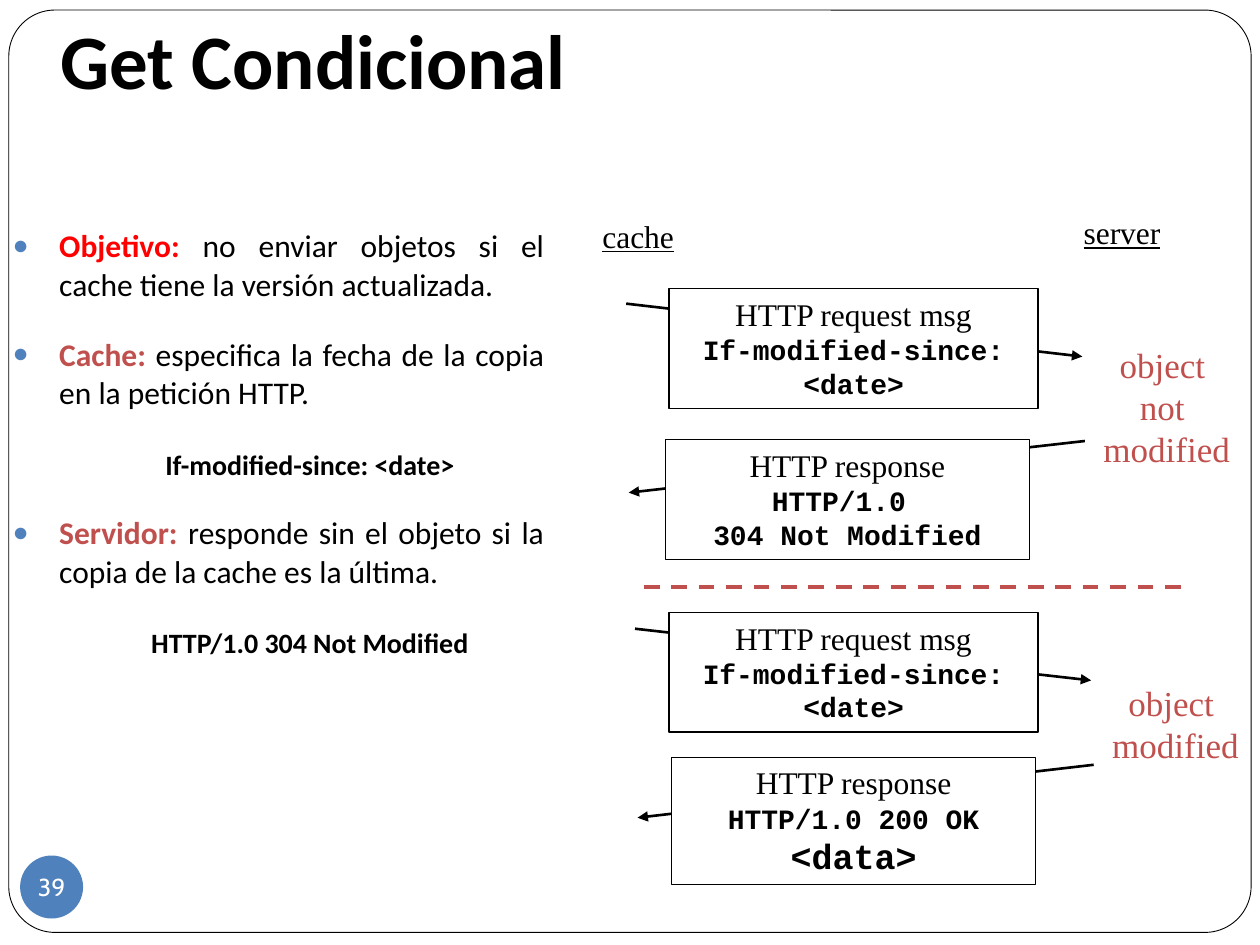
from lxml.etree import SubElement
from pptx import Presentation
from pptx.dml.color import RGBColor
from pptx.enum.dml import MSO_LINE
from pptx.enum.shapes import MSO_CONNECTOR, MSO_SHAPE
from pptx.enum.text import MSO_ANCHOR, MSO_AUTO_SIZE as AUTO, PP_ALIGN as ALIGN
from pptx.oxml.ns import qn
from pptx.util import Inches, Pt

COLORS = {"black": "000000", "white": "FFFFFF", "red": "FF0000",
          "brick": "C0504D", "blue": "4F81BD"}
SANS, SERIF, MONO = "Calibri", "Times New Roman", "Courier New"


def rgb(name):
    return RGBColor.from_string(COLORS[name])


def write(paragraph, text, font=SERIF, size=18, color="black", bold=False,
          underline=False, align=ALIGN.CENTER):
    """Add one formatted run to a paragraph."""
    paragraph.alignment = align
    run = paragraph.add_run()
    run.text = text
    run.font.name, run.font.size = font, Pt(size)
    run.font.bold, run.font.underline = bold, underline
    run.font.color.rgb = rgb(color)


def write_lines(frame, lines):
    """Write (text, format) pairs, one paragraph each."""
    for i, (text, style) in enumerate(lines):
        paragraph = frame.add_paragraph() if i else frame.paragraphs[0]
        write(paragraph, text, **style)


def place(shape, left, top, width, height):
    shape.left, shape.top = Inches(left), Inches(top)
    shape.width, shape.height = Inches(width), Inches(height)


def add_panel(slide, kind, box, fill="white", line_width=None):
    panel = slide.shapes.add_shape(kind, *map(Inches, box))
    panel.shadow.inherit = False
    panel.fill.solid()
    panel.fill.fore_color.rgb = rgb(fill)
    if line_width:
        panel.line.color.rgb = rgb("black")
        panel.line.width = Pt(line_width)
    else:
        panel.line.fill.background()
    return panel


def add_line(slide, start, end, color="black", width=1.5, dashed=False, arrow=False):
    line = slide.shapes.add_connector(MSO_CONNECTOR.STRAIGHT, *map(Inches, start + end))
    line.line.color.rgb = rgb(color)
    line.line.width = Pt(width)
    if dashed:
        line.line.dash_style = MSO_LINE.DASH
    if arrow:
        SubElement(line.line._get_or_add_ln(), qn("a:tailEnd"), type="triangle")
    SubElement(line._element.spPr, qn("a:effectLst"))


def add_label(slide, box, lines):
    frame = slide.shapes.add_textbox(*map(Inches, box)).text_frame
    frame.word_wrap = False
    frame.auto_size = AUTO.SHAPE_TO_FIT_TEXT
    write_lines(frame, lines)


def add_message(slide, start, end, box, heading, code):
    """Draw an arrow with the message box lying over it."""
    add_line(slide, start, end, arrow=True)
    frame = add_panel(slide, MSO_SHAPE.RECTANGLE, box, line_width=0.75).text_frame
    frame.word_wrap = True
    frame.auto_size = AUTO.SHAPE_TO_FIT_TEXT
    frame.vertical_anchor = MSO_ANCHOR.TOP
    write_lines(frame, [(heading, {})] + [
        (text, dict(font=MONO, size=size, bold=True)) for text, size in code])


def set_title(slide, text):
    title = slide.shapes.title
    place(title, 0.38, 0.22, 8.71, 0.72)
    frame = title.text_frame
    frame.auto_size = AUTO.NONE
    frame.vertical_anchor = MSO_ANCHOR.BOTTOM
    frame.margin_bottom = Inches(0.1)
    frame.paragraphs[0].line_spacing = 0.9
    write(frame.paragraphs[0], text, font=SANS, size=44, bold=True, align=ALIGN.LEFT)


def set_indent(paragraph, margin, indent, bullet=False):
    properties = paragraph._p.get_or_add_pPr()
    properties.set("marL", str(Inches(margin)))
    properties.set("indent", str(Inches(indent)))
    if bullet:
        bullet_color = SubElement(properties, qn("a:buClr"))
        SubElement(bullet_color, qn("a:srgbClr"), val=COLORS["blue"])
        SubElement(properties, qn("a:buSzPct"), val="85000")
        SubElement(properties, qn("a:buFont"), typeface="Arial")
        SubElement(properties, qn("a:buChar"), char="●")
    else:
        SubElement(properties, qn("a:buNone"))


def fill_body(slide, points):
    """Write (term, explanation, colour) bullets; those without a term are code lines."""
    body = slide.placeholders[1]
    place(body, 0, 1.74, 4.42, 4.71)
    frame = body.text_frame
    frame.auto_size = AUTO.NONE
    for i, (term, text, color) in enumerate(points):
        paragraph = frame.add_paragraph() if i else frame.paragraphs[0]
        paragraph.line_spacing = Pt(22)
        paragraph.space_before, paragraph.space_after = Pt(6), Pt(12)
        if term:
            set_indent(paragraph, 0.37, -0.37, bullet=True)
            write(paragraph, term, font=SANS, color=color, bold=True)
            write(paragraph, text, font=SANS, align=ALIGN.JUSTIFY)
        else:
            paragraph.level = 1
            set_indent(paragraph, 0.81, -0.31)
            write(paragraph, text, font=SANS, size=16, color=color, bold=True)


def add_page_number(slide, number):
    frame = add_panel(slide, MSO_SHAPE.OVAL, (0.16, 6.79, 0.5, 0.5), "blue").text_frame
    frame.margin_left = frame.margin_right = frame.margin_top = frame.margin_bottom = 0
    frame.word_wrap = False
    frame.vertical_anchor = MSO_ANCHOR.MIDDLE
    write(frame.paragraphs[0], number, font="Cabin", size=14, color="white")


def main():
    deck = Presentation()
    deck.slide_width, deck.slide_height = Inches(10), Inches(7.5)
    slide = deck.slides.add_slide(deck.slide_layouts[1])

    border = add_panel(slide, MSO_SHAPE.ROUNDED_RECTANGLE, (0.07, 0.08, 9.86, 7.32),
                       line_width=0.5)
    border.adjustments[0] = 0.05
    slide.shapes._spTree.insert(2, border._element)

    set_title(slide, "Get Condicional")
    fill_body(slide, [
        ("Objetivo: ", "no enviar objetos si el cache tiene la versión actualizada.", "red"),
        ("Cache: ", "especifica la fecha de la copia en la petición HTTP.", "brick"),
        (None, "If-modified-since: <date>", "black"),
        ("Servidor: ", "responde sin el objeto si la copia de la cache es la última. ",
         "brick"),
        (None, "HTTP/1.0 304 Not Modified", "black"),
    ])

    heading = dict(underline=True)
    add_label(slide, (4.52, 1.67, 1.09, 0.5), [("cache", heading)])
    add_label(slide, (8.3, 1.64, 1.21, 0.5), [("server", heading)])

    request = ("HTTP request msg", [("If-modified-since: <date>", 16)])
    outcome = dict(size=20, color="brick")

    add_message(slide, (4.97, 2.41), (8.59, 2.83), (5.31, 2.29, 2.93, 0.95), *request)
    add_message(slide, (8.61, 3.5), (4.99, 3.91), (5.28, 3.49, 2.89, 0.95),
                "HTTP response", [("HTTP/1.0 ", 16), ("304 Not Modified", 16)])
    add_label(slide, (8.59, 2.68, 1.34, 1.1),
              [(text, outcome) for text in ("object ", "not ", "modified")])

    add_line(slide, (5.11, 4.66), (9.38, 4.66), color="brick", width=2.25, dashed=True)

    add_message(slide, (5.04, 4.99), (8.66, 5.4), (5.31, 4.86, 2.93, 0.95), *request)
    add_message(slide, (8.68, 6.07), (5.06, 6.49), (5.33, 6.01, 2.89, 1.01),
                "HTTP response", [("HTTP/1.0 200 OK", 16), ("<data>", 20)])
    add_label(slide, (8.66, 5.36, 1.34, 0.77),
              [(text, outcome) for text in ("object ", "modified")])

    add_page_number(slide, "39")
    deck.save("out.pptx")


if __name__ == "__main__":
    main()
